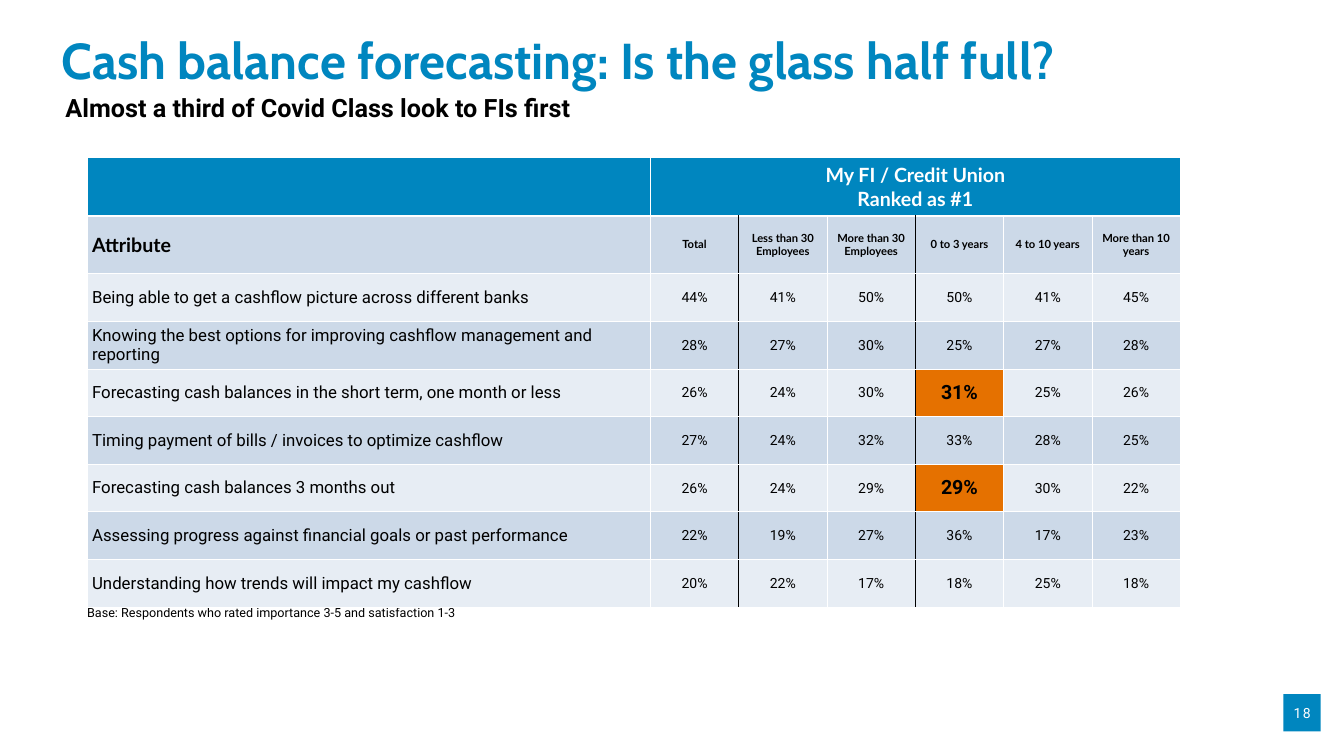
import pptx
import pptx.util
import pptx.dml.color
import pptx.enum.shapes
import pptx.enum.text
import pptx.oxml
import pptx.oxml.ns

Cm = pptx.util.Cm
Pt = pptx.util.Pt
Align = pptx.enum.text.PP_ALIGN
Anchor = pptx.enum.text.MSO_ANCHOR
Rgb = pptx.dml.color.RGBColor.from_string

hues = {"blue": "0086BF", "dark": "CCD9E8", "light": "E7EDF4",
        "orange": "E57100", "white": "FFFFFF", "black": "000000"}


def write(frame, text, size, font="Roboto", hue="black", bold=False,
          align=Align.LEFT, lead=None, track=None):
    """Fill a text frame, one paragraph for each line of text."""
    frame.word_wrap = True
    for i, line in enumerate(text.split("\n")):
        para = frame.paragraphs[0] if i == 0 else frame.add_paragraph()
        para.alignment = align
        if lead:
            para.line_spacing = lead
        run = para.add_run()
        run.text = line
        run.font.size = Pt(size)
        run.font.name = font
        run.font.bold = bold
        run.font.color.rgb = Rgb(hues[hue])
        if track:
            run.font._element.set("spc", str(track * 100))


def edge(cell, side, hue, width):
    """Add a border to one side (L, R, T, B, in that order) of a cell."""
    props = cell._tc.get_or_add_tcPr()
    props.append(pptx.oxml.parse_xml(
        f'<a:ln{side} {pptx.oxml.ns.nsdecls("a")} w="{Pt(width)}">'
        f'<a:solidFill><a:srgbClr val="{hues[hue]}"/></a:solidFill></a:ln{side}>'))


deck = pptx.Presentation()
deck.slide_width, deck.slide_height = Cm(67.72), Cm(38.1)
slide = deck.slides.add_slide(deck.slide_layouts[6])
shapes = slide.shapes

# Page number badge
badge = shapes.add_shape(pptx.enum.shapes.MSO_SHAPE.RECTANGLE,
                         Cm(64.67), Cm(34.98), Cm(1.88), Cm(1.88))
badge.shadow.inherit = False
badge.fill.solid()
badge.fill.fore_color.rgb = Rgb(hues["blue"])
badge.line.fill.background()

# Text boxes: place, margin, anchor, text, format
boxes = [
    ((64.95, 35.36, 1.32, 1.12), 0, Anchor.MIDDLE, "18",
     dict(size=20, hue="white", align=Align.CENTER, track=2)),
    ((3.1, 2.16, 61.57, 5.03), 0, Anchor.TOP,
     "Cash balance forecasting: Is the glass half full?",
     dict(size=72, font="Cabin", hue="blue", bold=True, lead=0.75)),
    ((4.39, 30.28, 27.84, 0.89), 0, Anchor.TOP,
     "Base: Respondents who rated importance 3-5 and satisfaction 1-3",
     dict(size=18, lead=1.3)),
    ((3.05, 4.52, 56.44, 1.8), 0.25, Anchor.TOP,
     "Almost a third of Covid Class look to FIs first",
     dict(size=36, bold=True)),
]
for place, pad, anchor, text, style in boxes:
    frame = shapes.add_textbox(*map(Cm, place)).text_frame
    frame.margin_left = frame.margin_right = Cm(pad)
    frame.margin_top = frame.margin_bottom = Cm(pad / 2)
    frame.vertical_anchor = anchor
    write(frame, text, **style)

# Table of rankings
rows = [
    ["", "My FI / Credit Union\nRanked as #1", "", "", "", "", ""],
    ["Attribute", "Total", "Less than 30 Employees", "More than 30 Employees",
     "0 to 3 years", "4 to 10 years", "More than 10 years"],
]
shares = [
    ("Being able to get a cashflow picture across different banks",
     44, 41, 50, 50, 41, 45),
    ("Knowing the best options for improving cashflow management and reporting",
     28, 27, 30, 25, 27, 28),
    ("Forecasting cash balances in the short term, one month or less",
     26, 24, 30, 31, 25, 26),
    ("Timing payment of bills / invoices to optimize cashflow",
     27, 24, 32, 33, 28, 25),
    ("Forecasting cash balances 3 months out",
     26, 24, 29, 29, 30, 22),
    ("Assessing progress against financial goals or past performance",
     22, 19, 27, 36, 17, 23),
    ("Understanding how trends will impact my cashflow",
     20, 22, 17, 18, 25, 18),
]
rows += [[label] + [f"{n}%" for n in nums] for label, *nums in shares]
marked = {(4, 4), (6, 4)}
widths = [28.38] + [4.45] * 6
heights = [2.92] * 2 + [2.4] * 7

table = shapes.add_table(len(rows), len(widths), Cm(4.39), Cm(7.95),
                         Cm(sum(widths)), Cm(sum(heights))).table
table.first_row = table.horz_banding = False
for col, width in zip(table.columns, widths):
    col.width = Cm(width)
for row, height in zip(table.rows, heights):
    row.height = Cm(height)
table.cell(0, 1).merge(table.cell(0, 6))

for r, row in enumerate(rows):
    for c, text in enumerate(row):
        cell = table.cell(r, c)
        cell.vertical_anchor = Anchor.MIDDLE
        align = Align.CENTER if c else Align.LEFT
        fill = "light" if r % 2 == 0 else "dark"
        if r == 0:
            fill = "blue"
            style = dict(size=28, font="Lato", hue="white", bold=True)
        elif r == 1:
            style = dict(size=16 if c else 28, font="Lato", bold=True)
        elif (r, c) in marked:
            fill = "orange"
            style = dict(size=28, bold=True)
        else:
            style = dict(size=20 if c else 24)

        if r > 1 or (r == 1 and c):
            pad = 0.03 if r > 1 else 0
            cell.margin_left = Cm(pad if c else 0.25)
            cell.margin_right = cell.margin_top = Cm(pad)
            cell.margin_bottom = 0

        edge(cell, "L", "black" if r and c in (2, 4) else "white", 1)
        edge(cell, "R", "black" if r and c in (1, 3) else "white", 1)
        edge(cell, "T", "white", 1)
        edge(cell, "B", "white", 1 if r else 3)
        cell.fill.solid()
        cell.fill.fore_color.rgb = Rgb(hues[fill])
        if text:
            write(cell.text_frame, text, align=align, **style)

deck.save("out.pptx")
